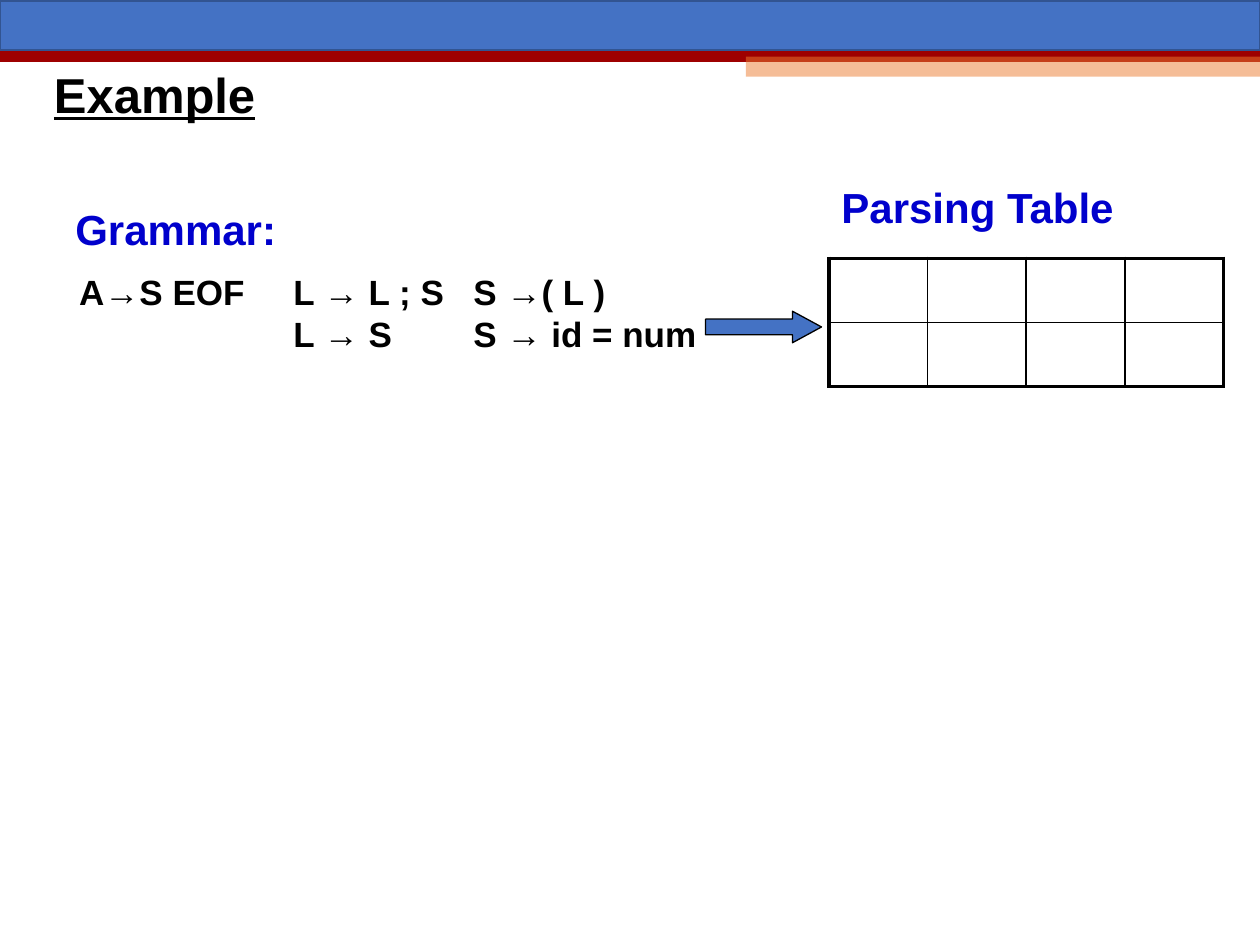
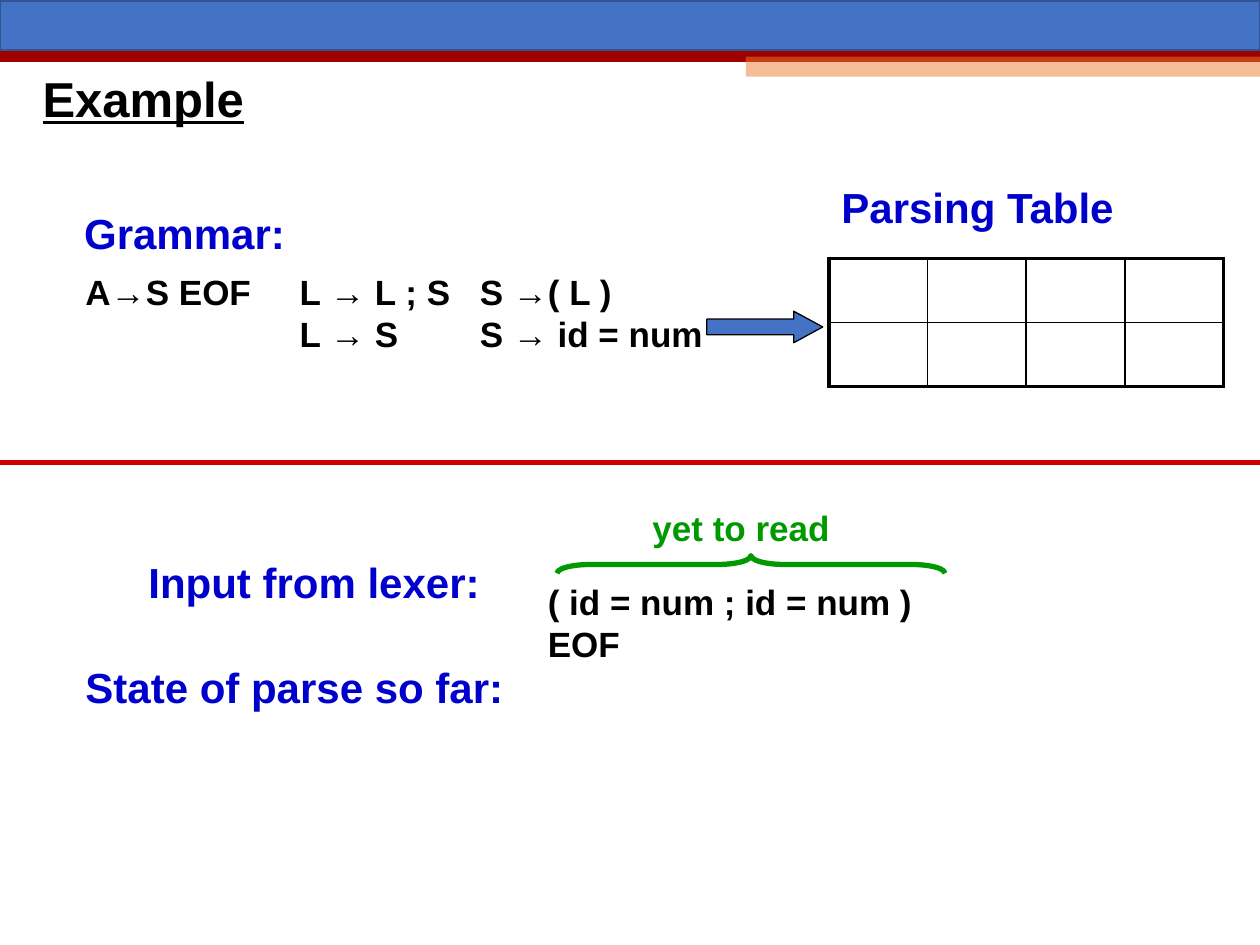
from lxml.etree import SubElement
from pptx import Presentation
from pptx.dml.color import RGBColor
from pptx.enum.shapes import MSO_CONNECTOR, MSO_SHAPE
from pptx.enum.text import MSO_ANCHOR
from pptx.oxml.ns import qn
from pptx.util import Inches, Pt

BLACK = RGBColor(0x00, 0x00, 0x00)
BLUE = RGBColor(0x44, 0x72, 0xC4)
BLUE_EDGE = RGBColor(0x32, 0x54, 0x91)
ORANGE = RGBColor(0xED, 0x7D, 0x31)
DARK_RED = RGBColor(0x9E, 0x00, 0x00)
RED = RGBColor(0xCC, 0x00, 0x00)
HEADING = RGBColor(0x00, 0x00, 0xCC)
GREEN = RGBColor(0x00, 0x99, 0x00)

FONT = "Arial"
TITLE_SIZE, HEADING_SIZE, BODY_SIZE = 28, 24, 20
WIDTH, HEIGHT = 10, 7.5
THICK, THIN = 2.25, 1

# Lengths are inches; boxes are (left, top, width, height).
TITLE = "Example"
RULES = [  # left, width, productions
    (0.53, 1.53, ["A→S EOF"]),
    (2.23, 1.4, ["L → L ; S", "L → S"]),
    (3.66, 2.03, ["S →( L )", "S → id = num"]),
]
RULES_TOP, RULE_HEIGHT = 2.1, 0.38
TABLE_BOX, TABLE_ROWS, TABLE_COLUMNS = (6.58, 2.05, 3.13, 1.02), 2, 4
SLIDES = [
    {"title": (0.33, 0.42), "grammar": (0.5, 1.57), "rules_shift": 0,
     "arrow": 5.6, "parse": False},
    {"title": (0.24, 0.45), "grammar": (0.57, 1.6), "rules_shift": 0.05,
     "arrow": 5.61, "parse": True},
]
PARSE_TEXTS = [  # text, box, size, colour, wrap
    ("State of parse so far:", (0.58, 5.2, 3.52, 0.5), HEADING_SIZE, HEADING, False),
    ("( id = num ; id = num ) EOF", (4.25, 4.56, 3.73, 0.43), BODY_SIZE, BLACK, True),
    ("Input from lexer:", (1.08, 4.37, 2.83, 0.5), HEADING_SIZE, HEADING, False),
    ("yet to read", (5.08, 3.97, 1.7, 0.43), BODY_SIZE, GREEN, True),
]


def add_text(slide, lines, box, size, color, wrap=False):
    frame = slide.shapes.add_textbox(*map(Inches, box)).text_frame
    frame.word_wrap = wrap
    frame.text = "\n".join(lines)
    for paragraph in frame.paragraphs:
        font = paragraph.font
        font.name, font.size, font.bold = FONT, Pt(size), True
        font.color.rgb = color
    return frame


def add_figure(slide, preset, box, fill=None, edge=None, weight=1):
    figure = slide.shapes.add_shape(preset, *map(Inches, box))
    figure.shadow.inherit = False
    if fill is None:
        figure.fill.background()
    else:
        figure.fill.solid()
        figure.fill.fore_color.rgb = fill
    if edge is None:
        figure.line.fill.background()
    else:
        figure.line.color.rgb = edge
        figure.line.width = Pt(weight)
    return figure


def add_rule(slide, top, color, weight):
    """Draw a horizontal line across the whole slide."""
    rule = slide.shapes.add_connector(
        MSO_CONNECTOR.STRAIGHT, 0, Inches(top), Inches(WIDTH), Inches(top))
    rule.line.color.rgb = color
    rule.line.width = Pt(weight)
    SubElement(rule._element.spPr, qn("a:effectLst"))


def add_bands(slide):
    add_rule(slide, 0.44, DARK_RED, 7.5)
    accent = add_figure(slide, MSO_SHAPE.RECTANGLE, (5.92, 0.45, 4.08, 0.16), ORANGE)
    color = accent._element.spPr.find(f"{qn('a:solidFill')}/{qn('a:srgbClr')}")
    SubElement(color, qn("a:alpha"), val="50000")
    add_figure(slide, MSO_SHAPE.RECTANGLE, (0, 0.01, WIDTH, 0.39), BLUE, BLUE_EDGE)


def add_title(slide, left, top):
    frame = add_text(slide, [TITLE], (left, top, 9, 0.71), TITLE_SIZE, BLACK, True)
    frame.vertical_anchor = MSO_ANCHOR.MIDDLE
    frame.paragraphs[0].line_spacing = 0.9
    frame.paragraphs[0].font.underline = True


def set_borders(cell, weights):
    properties = cell._tc.get_or_add_tcPr()
    for side, weight in weights.items():
        border = SubElement(properties, qn(f"a:ln{side}"), w=str(Pt(weight)))
        fill = SubElement(border, qn("a:solidFill"))
        SubElement(fill, qn("a:srgbClr"), val=str(BLACK))


def add_parsing_table(slide):
    """Add the empty table, thick outside and thin inside."""
    table = slide.shapes.add_table(
        TABLE_ROWS, TABLE_COLUMNS, *map(Inches, TABLE_BOX)).table
    table.first_row = table.horz_banding = False
    for row in range(TABLE_ROWS):
        for column in range(TABLE_COLUMNS):
            outer = {"L": column == 0, "R": column == TABLE_COLUMNS - 1,
                     "T": row == 0, "B": row == TABLE_ROWS - 1}
            cell = table.cell(row, column)
            set_borders(cell, {side: THICK if outside else THIN
                               for side, outside in outer.items()})
            cell.fill.background()


def add_grammar(slide, heading, shift, arrow_left):
    for left, width, productions in RULES:
        box = (left + shift, RULES_TOP, width, RULE_HEIGHT * len(productions))
        add_text(slide, productions, box, BODY_SIZE, BLACK)
    add_text(slide, ["Grammar:"], (*heading, 1.8, 0.5), HEADING_SIZE, HEADING)
    add_parsing_table(slide)
    add_text(slide, ["Parsing Table"], (TABLE_BOX[0], 1.39, 2.39, 0.5),
             HEADING_SIZE, HEADING)
    arrow = add_figure(slide, MSO_SHAPE.RIGHT_ARROW, (arrow_left, 2.47, 0.92, 0.25),
                       BLUE, BLACK, 0.75)
    arrow.adjustments[1] = 0.92


def add_parse_state(slide):
    for text, box, size, color, wrap in PARSE_TEXTS:
        add_text(slide, [text], box, size, color, wrap)
    brace = add_figure(slide, MSO_SHAPE.RIGHT_BRACE, (5.89, 2.94, 0.14, 3.08),
                       edge=GREEN, weight=3)
    brace.rotation = 270
    brace.adjustments[0] = 1.9
    add_rule(slide, 3.67, RED, 3)


def main():
    deck = Presentation()
    deck.slide_width, deck.slide_height = Inches(WIDTH), Inches(HEIGHT)
    for content in SLIDES:
        slide = deck.slides.add_slide(deck.slide_layouts[6])
        add_bands(slide)
        add_title(slide, *content["title"])
        add_grammar(slide, content["grammar"], content["rules_shift"], content["arrow"])
        if content["parse"]:
            add_parse_state(slide)
    deck.save("out.pptx")


if __name__ == "__main__":
    main()
